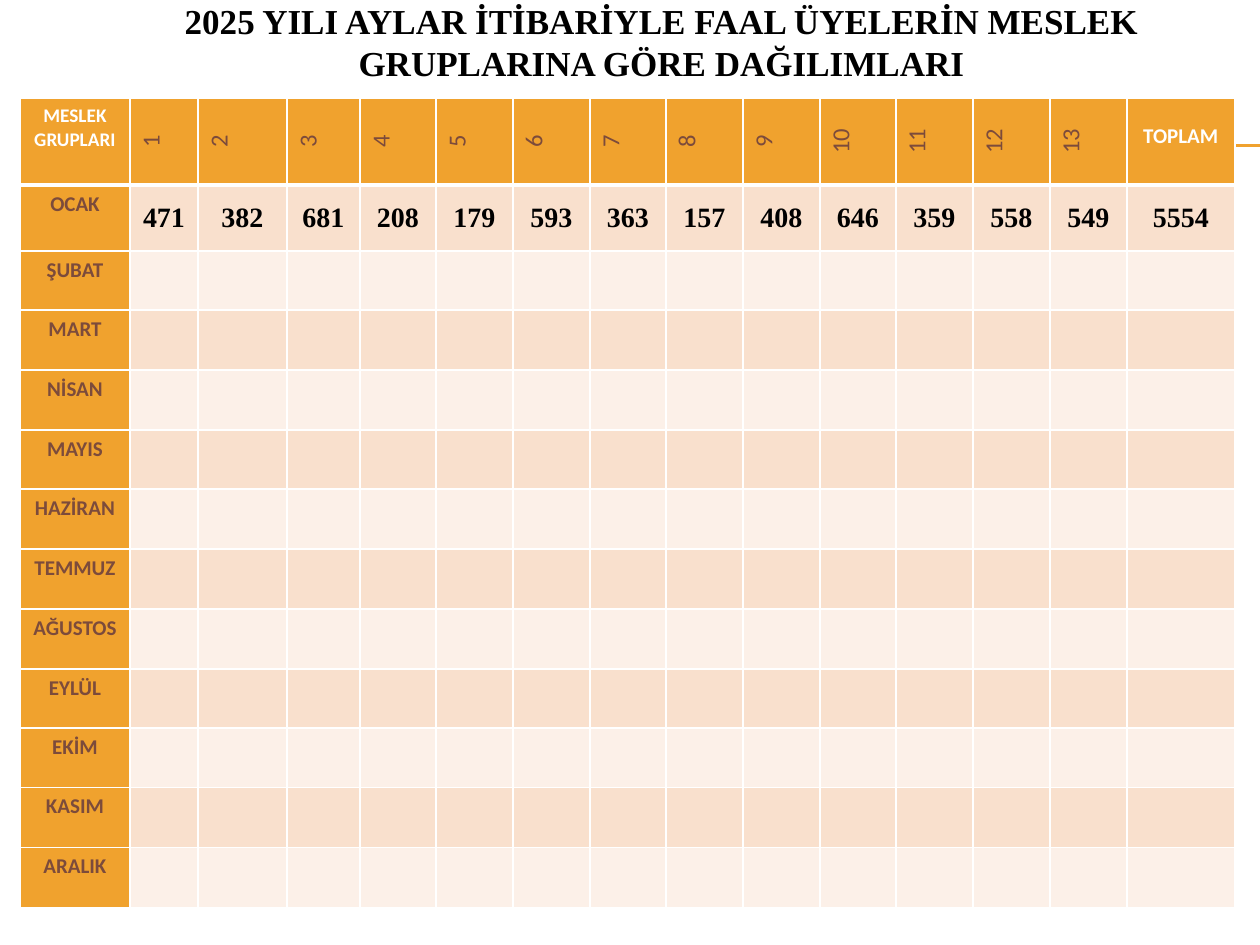
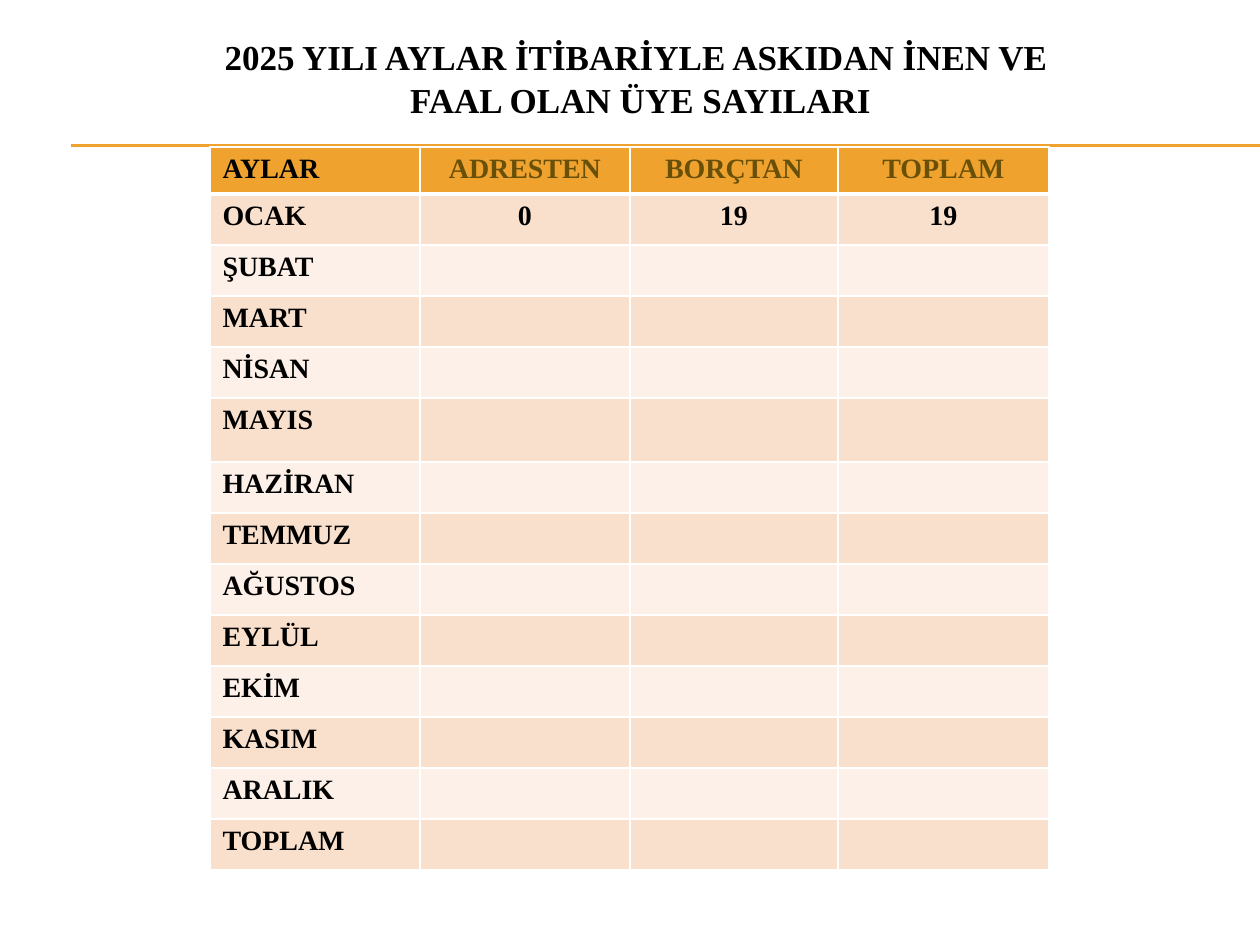
from lxml.etree import SubElement
from pptx import Presentation
from pptx.dml.color import RGBColor
from pptx.enum.shapes import MSO_CONNECTOR
from pptx.enum.text import MSO_ANCHOR, MSO_AUTO_SIZE, PP_ALIGN
from pptx.oxml.ns import qn
from pptx.util import Emu, Pt

# Shared look
ORANGE = RGBColor(0xF0, 0xA2, 0x2E)
PEACH = RGBColor(0xF9, 0xE0, 0xCD)
CREAM = RGBColor(0xFC, 0xF0, 0xE8)
WHITE = RGBColor(0xFF, 0xFF, 0xFF)
BLACK = RGBColor(0x00, 0x00, 0x00)
BROWN = RGBColor(0x7C, 0x4B, 0x3B)
OLIVE = RGBColor(0x69, 0x50, 0x08)
SERIF = "Times New Roman"
SANS = "Calibri"
PX_PER_INCH = 126
TITLE_ONLY = 5

MONTHS = ["OCAK", "ŞUBAT", "MART", "NİSAN", "MAYIS", "HAZİRAN", "TEMMUZ",
          "AĞUSTOS", "EYLÜL", "EKİM", "KASIM", "ARALIK"]
JANUARY_BY_GROUP = [471, 382, 681, 208, 179, 593, 363, 157, 408, 646, 359, 558, 549, 5554]
JANUARY_REACTIVATED = [0, 19, 19]


def px(length):
    return Emu(round(length * 914400 / PX_PER_INCH))


def split_evenly(total, count):
    """Share a length out in whole px that add up to the total."""
    edges = [total * index // count for index in range(count + 1)]
    return [end - start for start, end in zip(edges, edges[1:])]


def write(frame, text, size=16, font=SERIF, color=BLACK, bold=True, align=PP_ALIGN.CENTER):
    para = frame.paragraphs[0]
    para.alignment = align
    for index, line in enumerate(text.split("\n")):
        if index:
            para.add_line_break()
        span = para.add_run()
        span.text = line
        span.font.size = Pt(size)
        span.font.name = font
        span.font.bold = bold
        span.font.color.rgb = color


def add_rule(page, y):
    rule = page.shapes.add_connector(MSO_CONNECTOR.STRAIGHT, px(71), px(y), px(1260), px(y))
    rule.line.color.rgb = ORANGE
    rule.line.width = Pt(0.75)
    SubElement(rule._element.spPr, qn("a:effectLst"))


def add_page(deck, title, left, top, width, height):
    page = deck.slides.add_slide(deck.slide_layouts[TITLE_ONLY])
    for y in (145, 146):
        add_rule(page, y)
    box = page.shapes.title
    box.left, box.top, box.width, box.height = map(px, (left, top, width, height))
    frame = box.text_frame
    frame.auto_size = MSO_AUTO_SIZE.NONE
    frame.word_wrap = True
    frame.vertical_anchor = MSO_ANCHOR.MIDDLE
    write(frame, title, size=20)
    return page


def set_borders(cell, row):
    properties = cell._tc.get_or_add_tcPr()
    widths = {"lnL": 1, "lnR": 1, "lnT": 3 if row == 1 else 1, "lnB": 3 if row == 0 else 1}
    for side, width in widths.items():
        line = SubElement(properties, qn(f"a:{side}"), w=str(Pt(width)))
        fill = SubElement(line, qn("a:solidFill"))
        SubElement(fill, qn("a:srgbClr"), val=str(WHITE))


def add_grid(page, left, top, widths, heights, orange_first_column=False):
    """Add an empty table with an orange header and banded rows."""
    frame = page.shapes.add_table(len(heights), len(widths), px(left), px(top),
                                  px(sum(widths)), px(sum(heights)))
    table = frame.table
    table.horz_banding = False
    for column, width in zip(table.columns, widths):
        column.width = px(width)
    for row, height in enumerate(heights):
        table.rows[row].height = px(height)
        for column in range(len(widths)):
            cell = table.cell(row, column)
            set_borders(cell, row)
            is_orange = row == 0 or (orange_first_column and column == 0)
            cell.fill.solid()
            cell.fill.fore_color.rgb = ORANGE if is_orange else PEACH if row % 2 else CREAM
            if row > 1 and column > 0:
                cell.margin_bottom = 0  # lets blank cells keep the row height
    return table


def fill_row(table, row, values, first=1, anchor=MSO_ANCHOR.TOP, **style):
    for column, value in enumerate(values, first):
        cell = table.cell(row, column)
        cell.vertical_anchor = anchor
        write(cell.text_frame, str(value), **style)


def fill_first_column(table, labels, **style):
    for row, label in enumerate(labels, 1):
        write(table.cell(row, 0).text_frame, label, **style)


def add_groups_page(deck):
    page = add_page(deck, "2025 YILI AYLAR İTİBARİYLE FAAL ÜYELERİN MESLEK "
                    "GRUPLARINA GÖRE DAĞILIMLARI", 63, 0, 1197, 84)
    table = add_grid(page, 20, 98, [110, 68, 89, 73, *split_evenly(767, 10), 108],
                     [87, 66, *split_evenly(657, 11)], orange_first_column=True)

    # Header: group numbers turned upwards between two labels
    fill_row(table, 0, ["MESLEK GRUPLARI"], first=0, size=11, font=SANS, color=WHITE)
    fill_row(table, 0, range(1, 14), size=14, font=SANS, color=BROWN, bold=False)
    for column in range(1, 14):
        table.cell(0, column)._tc.get_or_add_tcPr().set("vert", "vert270")
    fill_row(table, 0, ["TOPLAM"], first=14, anchor=MSO_ANCHOR.BOTTOM,
             size=12, font=SANS, color=WHITE)
    table.cell(0, 14).margin_bottom = px(36)

    # Months and the first month's counts
    fill_first_column(table, MONTHS, size=12, font=SANS, color=BROWN)
    fill_row(table, 1, JANUARY_BY_GROUP, anchor=MSO_ANCHOR.MIDDLE)


def add_reactivated_page(deck):
    page = add_page(deck, "2025 YILI AYLAR İTİBARİYLE ASKIDAN İNEN VE \n"
                    "FAAL OLAN ÜYE SAYILARI", 42, 20, 1197, 116)
    heights = [47] + [64 if month == "MAYIS" else 51 for month in MONTHS] + [51]
    table = add_grid(page, 210, 147, [210, 210, 208, 211], heights)
    fill_row(table, 0, ["AYLAR"], first=0, align=PP_ALIGN.LEFT)
    fill_row(table, 0, ["ADRESTEN", "BORÇTAN", "TOPLAM"], color=OLIVE)
    fill_first_column(table, MONTHS + ["TOPLAM"], align=PP_ALIGN.LEFT)
    fill_row(table, 1, JANUARY_REACTIVATED)


def main():
    deck = Presentation()
    deck.slide_width, deck.slide_height = px(1260), px(945)
    add_groups_page(deck)
    add_reactivated_page(deck)
    deck.save("out.pptx")


if __name__ == "__main__":
    main()
